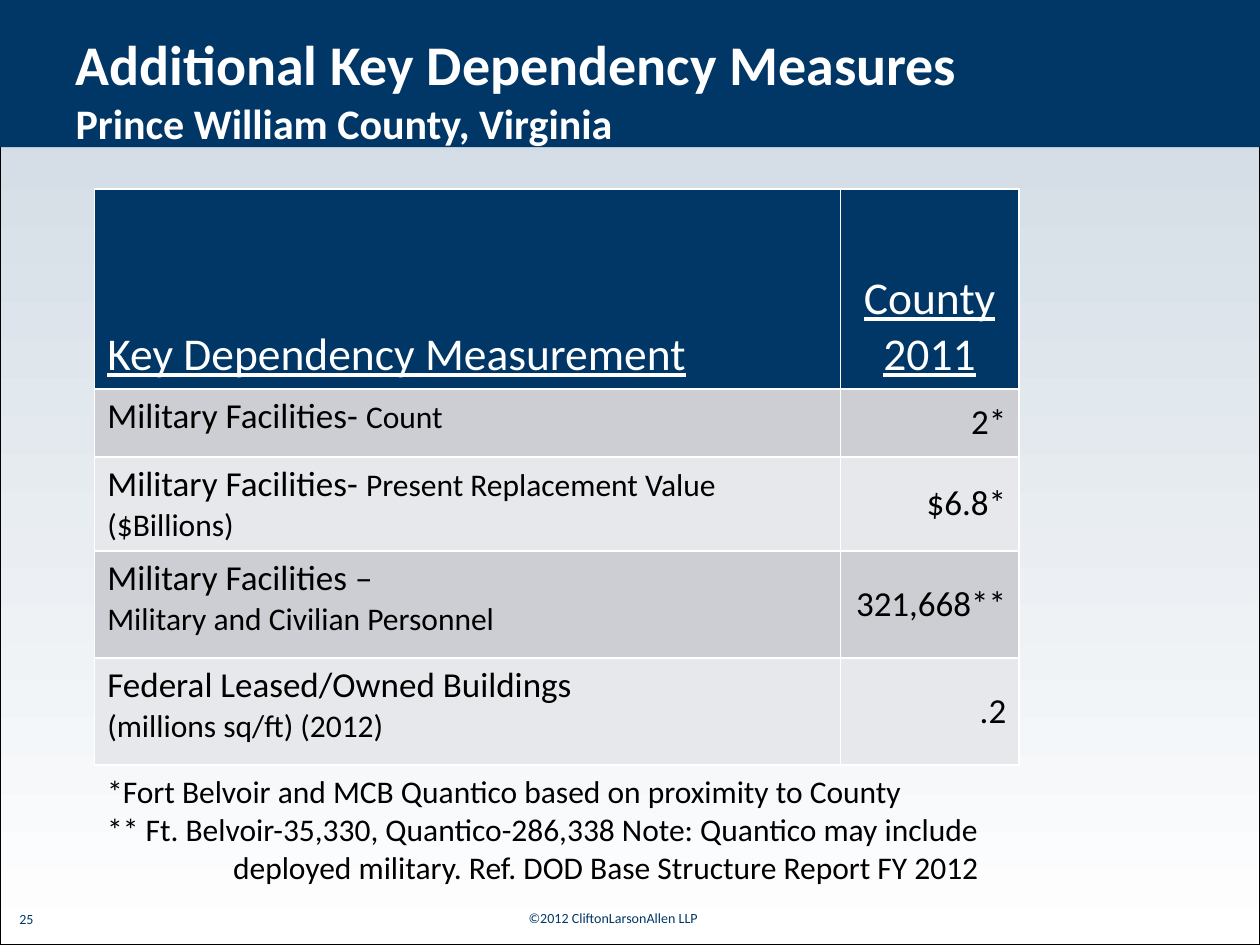
from lxml.etree import SubElement
from pptx import Presentation
from pptx.dml.color import RGBColor
from pptx.enum.shapes import MSO_SHAPE
from pptx.enum.text import MSO_ANCHOR, MSO_AUTO_SIZE, PP_ALIGN
from pptx.oxml.ns import qn
from pptx.util import Cm, Pt

NAVY = RGBColor(0x00, 0x37, 0x67)
WHITE = RGBColor(0xFF, 0xFF, 0xFF)
BLACK = RGBColor(0x00, 0x00, 0x00)
MIST = RGBColor(0xCC, 0xD7, 0xE1)
ROW_FILLS = (RGBColor(0xCC, 0xCE, 0xD3), RGBColor(0xE7, 0xE8, 0xEB))

COLUMN_WIDTHS = (15.03, 3.6)
HEADER_HEIGHT = 4.03
HEADINGS = ([[("Key Dependency Measurement", 26)]], [[("County", 26)], [("2011", 26)]])
MEASURES = (
    (1.37, [[("Military Facilities- ", 20), ("Count", 18)]], "2*"),
    (1.88, [[("Military Facilities- ", 20),
             ("Present Replacement Value ($Billions)", 18)]], "$6.8*"),
    (2.16, [[("Military Facilities –", 20)],
            [("Military and Civilian Personnel", 18)]], "321,668**"),
    (2.16, [[("Federal Leased/Owned Buildings", 20)],
            [("(millions sq/ft) (2012)", 18)]], ".2"),
)
NOTES = (
    "*Fort Belvoir and MCB Quantico based on proximity to County",
    "** Ft. Belvoir-35,330, Quantico-286,338 Note: Quantico may include "
    "deployed military. Ref. DOD Base Structure Report FY 2012",
)


def write(frame, paragraphs, color, align=PP_ALIGN.LEFT, **font_format):
    for index, runs in enumerate(paragraphs):
        line = frame.paragraphs[0] if index == 0 else frame.add_paragraph()
        line.alignment = align
        for words, size in runs:
            run = line.add_run()
            run.text = words
            run.font.color.rgb = color
            values = {"name": "Calibri", "size": Pt(size), **font_format}
            for attribute, value in values.items():
                setattr(run.font, attribute, value)


def add_text(slide, box, paragraphs, color, align=PP_ALIGN.LEFT):
    frame = slide.shapes.add_textbox(*map(Cm, box)).text_frame
    frame.word_wrap = True
    write(frame, paragraphs, color, align)
    return frame


def add_backdrop(slide, box):
    fill = slide.background.fill
    fill.gradient()
    fill.gradient_angle = 270
    for stop, color, position in zip(fill.gradient_stops, (MIST, WHITE), (0, 1)):
        stop.color.rgb = color
        stop.position = position
    border = slide.shapes.add_shape(MSO_SHAPE.RECTANGLE, *map(Cm, box))
    border.shadow.inherit = False
    border.fill.background()
    border.line.color.rgb = BLACK
    border.line.width = Pt(0.75)


def add_heading(slide, box):
    left, top, width, height = box
    band = slide.shapes.add_shape(MSO_SHAPE.RECTANGLE, *map(Cm, box))
    band.shadow.inherit = False
    band.fill.solid()
    band.fill.fore_color.rgb = NAVY
    band.line.fill.background()
    title = slide.shapes.title
    band._element.addnext(title._element)
    place = {"left": left + 1.27, "top": top + 0.84,
             "width": width - 2.54, "height": 1.9}
    for attribute, value in place.items():
        setattr(title, attribute, Cm(value))
    frame = title.text_frame
    frame.auto_size = MSO_AUTO_SIZE.NONE
    frame.vertical_anchor = MSO_ANCHOR.MIDDLE
    write(frame, [[("Additional Key Dependency Measures\v", 32),
                   ("Prince William County, Virginia", 24)]], WHITE, bold=True)
    for run in frame.paragraphs[0].runs:
        if run.text.endswith(("\v", "_x000B_")):
            run.text = "Additional Key Dependency Measures"
            line_break = SubElement(frame.paragraphs[0]._p, qn("a:br"))
            run._r.addnext(line_break)


def style_cell(cell, fill, anchor):
    cell.vertical_anchor = anchor
    properties = cell._tc.get_or_add_tcPr()
    for side in ("a:lnL", "a:lnR", "a:lnT", "a:lnB"):
        edge = SubElement(properties, qn(side), w=str(Pt(1)))
        SubElement(SubElement(edge, qn("a:solidFill")), qn("a:srgbClr"), val=str(WHITE))
    cell.fill.solid()
    cell.fill.fore_color.rgb = fill


def add_measures(slide, box):
    table = slide.shapes.add_table(
        len(MEASURES) + 1, len(COLUMN_WIDTHS), *map(Cm, box)).table
    for column, width in zip(table.columns, COLUMN_WIDTHS):
        column.width = Cm(width)
    heights = [HEADER_HEIGHT] + [height for height, _, _ in MEASURES]
    for row, height in zip(table.rows, heights):
        row.height = Cm(height)
    aligns = (PP_ALIGN.LEFT, PP_ALIGN.CENTER)
    for column, (heading, align) in enumerate(zip(HEADINGS, aligns)):
        cell = table.cell(0, column)
        style_cell(cell, NAVY, MSO_ANCHOR.BOTTOM)
        write(cell.text_frame, heading, WHITE, align, bold=False, underline=True)
    for row, (_, measure, figure) in enumerate(MEASURES, 1):
        fill = ROW_FILLS[(row - 1) % 2]
        label, value = table.cell(row, 0), table.cell(row, 1)
        style_cell(label, fill, MSO_ANCHOR.TOP)
        style_cell(value, fill, MSO_ANCHOR.MIDDLE)
        write(label.text_frame, measure, BLACK)
        write(value.text_frame, [[(figure, 20)]], BLACK, PP_ALIGN.RIGHT)


def add_notes(slide, box):
    frame = add_text(slide, box, [[(note, 18)] for note in NOTES], BLACK)
    hanging = frame.paragraphs[-1]._p.get_or_add_pPr()
    hanging.set("marL", str(Cm(2.54)))
    hanging.set("indent", str(-Cm(2.54)))


def add_footer(slide, box):
    left, top, _, height = box
    add_text(slide, (left + 10.36, top, 4.01, height),
             [[("©2012 CliftonLarsonAllen LLP", 8)]], NAVY, PP_ALIGN.CENTER)
    add_text(slide, (left, top + 0.03, 1.07, height),
             [[("25", 8)]], NAVY, PP_ALIGN.CENTER)


def main():
    deck = Presentation()
    deck.slide_width, deck.slide_height = Cm(25.4), Cm(19.05)
    slide = deck.slides.add_slide(deck.slide_layouts[5])
    add_backdrop(slide, (0, 0, 25.4, 19.05))
    add_footer(slide, (0, 18.21, 25.4, 0.61))
    add_heading(slide, (0, 0, 25.4, 2.97))
    add_measures(slide, (1.91, 3.81, 18.63, 11.6))
    add_notes(slide, (1.91, 15.44, 18.42, 2.57))
    deck.save("out.pptx")


if __name__ == "__main__":
    main()
